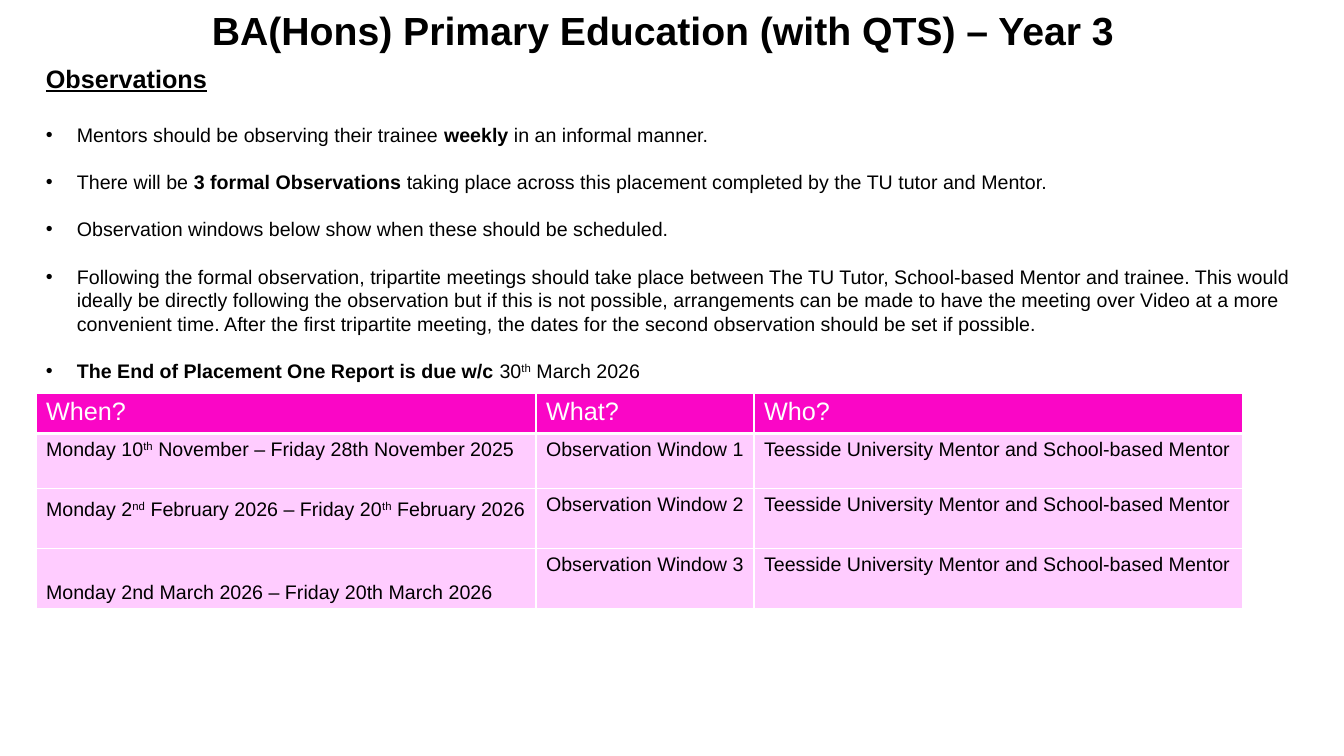
from lxml.etree import SubElement
from pptx import Presentation
from pptx.dml.color import RGBColor
from pptx.enum.text import MSO_ANCHOR
from pptx.oxml.ns import qn
from pptx.util import Pt

BLACK = RGBColor(0x00, 0x00, 0x00)
WHITE = RGBColor(0xFF, 0xFF, 0xFF)
MAGENTA = RGBColor(0xFA, 0x06, 0xC6)
PINK = RGBColor(0xFF, 0xCC, 0xFF)

TITLE = dict(name="Arial", size=Pt(28), bold=True)
HEADING = dict(name="Arial", size=Pt(18), bold=True, underline=True)
BODY = dict(name="Arial", size=Pt(14))
HEADER = dict(name="Arial", size=Pt(18))
BOLD = dict(bold=True)
SUPER = dict(baseline="30000")

BULLETS = [
    [("Mentors should be observing their trainee ", {}), ("weekly", BOLD),
     (" in an informal manner.", {})],
    [("There will be ", {}), ("3 formal Observations ", BOLD),
     ("taking place across this placement completed by the TU tutor and Mentor.", {})],
    [("Observation windows below show when these should be scheduled.", {})],
    [("Following the formal observation, tripartite meetings should take place between "
      "The TU Tutor, School-based Mentor and trainee. This would ideally be directly "
      "following the observation but if this is not possible, arrangements can be made "
      "to have the meeting over Video at a more convenient time. After the first "
      "tripartite meeting, the dates for the second observation should be set if "
      "possible.", {})],
    [("The End of Placement One Report is due w/c ", BOLD), ("30", {}),
     ("th", SUPER), (" March 2026", {})],
]
COLUMNS = ["When?", "What?", "Who?"]
WINDOWS = [
    [("Monday 10", {}), ("th", SUPER), (" November – Friday 28th November 2025", {})],
    [("Monday 2", {}), ("nd", SUPER), (" February 2026 – Friday 20", {}),
     ("th", SUPER), (" February 2026", {})],
    [("Monday 2nd March 2026 – Friday 20th March 2026", {})],
]
OBSERVERS = "Teesside University Mentor and School-based Mentor"


def px(n):
    return round(n * 914400 / 100.8)


def add_runs(p, runs, base, color=BLACK):
    for text, extra in runs:
        r = p.add_run()
        r.text = text
        for key, value in {**base, **extra}.items():
            if key == "baseline":
                r.font._element.set(key, value)
            else:
                setattr(r.font, key, value)
        r.font.color.rgb = color


def add_text_frame(slide, box):
    tf = slide.shapes.add_textbox(*map(px, box)).text_frame
    tf.word_wrap = True
    return tf


def add_title(slide, box):
    p = add_text_frame(slide, box).paragraphs[0]
    p.line_spacing = 0.9
    add_runs(p, [("BA(Hons) Primary Education (with QTS) – Year 3", {})], TITLE)


def add_observations(slide, box):
    tf = add_text_frame(slide, box)
    add_runs(tf.paragraphs[0], [("Observations", {})], HEADING)
    for i, runs in enumerate(BULLETS):
        p = tf.add_paragraph()
        p.space_before = Pt(17 if i else 21)
        pPr = p._p.get_or_add_pPr()
        pPr.set("marL", str(px(31)))
        pPr.set("indent", str(-px(31)))
        SubElement(pPr, qn("a:buFont"), typeface="Arial")
        SubElement(pPr, qn("a:buChar"), char="•")
        add_runs(p, runs, BODY)


def add_borders(cell, bottom):
    tcPr = cell._tc.get_or_add_tcPr()
    for i, (side, width) in enumerate([("L", 1), ("R", 1), ("T", 1), ("B", bottom)]):
        ln = tcPr.makeelement(qn(f"a:ln{side}"), {"w": str(Pt(width))})
        fill = SubElement(ln, qn("a:solidFill"))
        SubElement(fill, qn("a:srgbClr"), val=str(WHITE))
        tcPr.insert(i, ln)


def add_schedule(slide, box, widths, heights):
    table = slide.shapes.add_table(len(heights), len(widths), *map(px, box)).table
    for column, width in zip(table.columns, widths):
        column.width = px(width)
    for row, height in zip(table.rows, heights):
        row.height = px(height)
    rows = [[[(name, {})] for name in COLUMNS]]
    for i, window in enumerate(WINDOWS, 1):
        rows.append([window, [(f"Observation Window {i}", {})], [(OBSERVERS, {})]])
    for i, row in enumerate(rows):
        for j, runs in enumerate(row):
            cell = table.cell(i, j)
            cell.fill.solid()
            cell.fill.fore_color.rgb = PINK if i else MAGENTA
            add_borders(cell, 1 if i else 3)
            add_runs(cell.text_frame.paragraphs[0], runs,
                     BODY if i else HEADER, BLACK if i else WHITE)
    for i, margin in [(2, 28), (3, 5)]:
        cell = table.cell(i, 0)
        cell.vertical_anchor = MSO_ANCHOR.BOTTOM
        cell.margin_bottom = px(margin)


def main():
    prs = Presentation()
    prs.slide_width, prs.slide_height = px(1344), px(756)
    slide = prs.slides.add_slide(prs.slide_layouts[6])
    add_observations(slide, (36, 58, 1274, 387))
    add_title(slide, (202, 7, 1175, 146))
    add_schedule(slide, (36, 393, 1207, 215), (500, 218, 489), (40, 55, 60, 60))
    prs.save("out.pptx")


if __name__ == "__main__":
    main()
